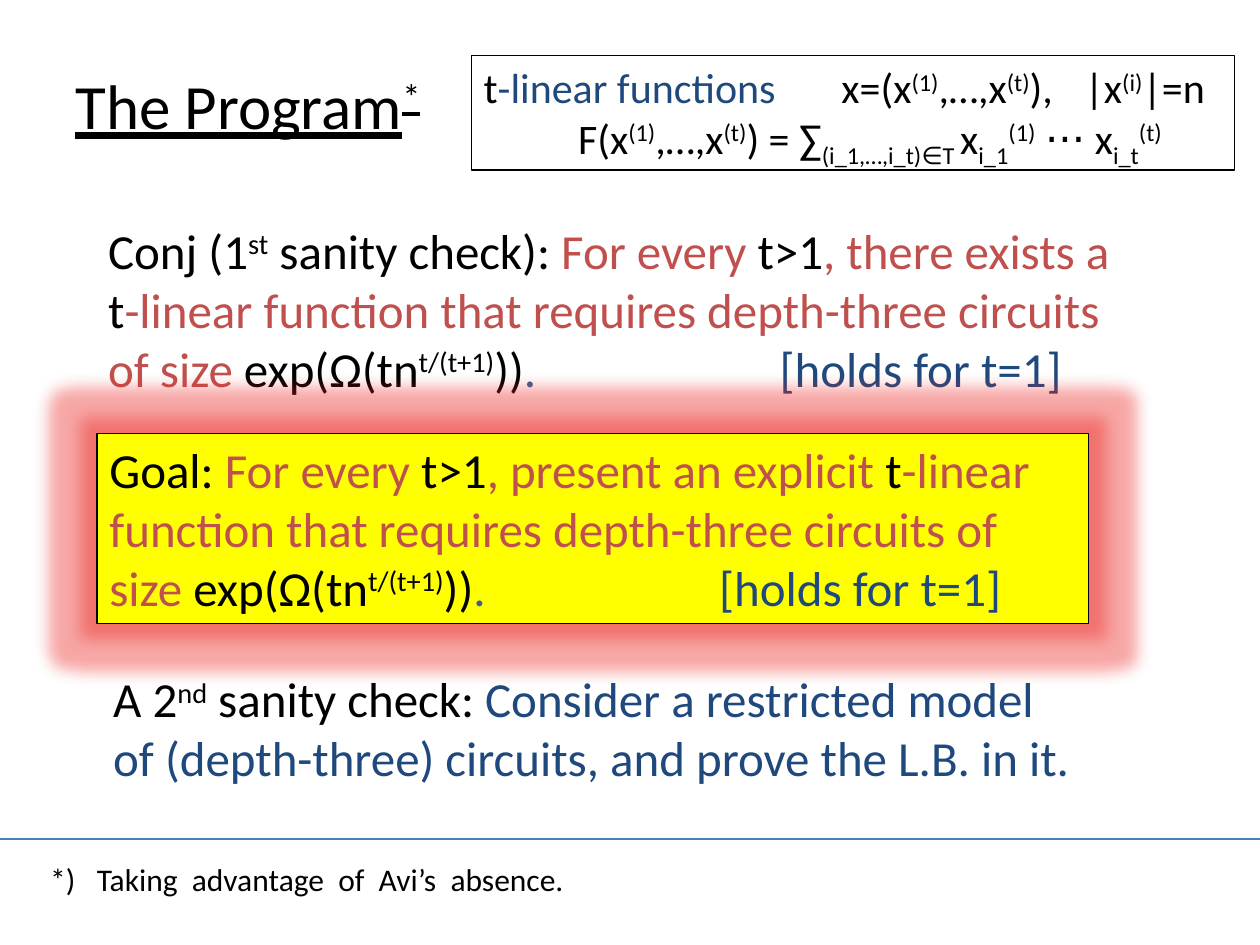
from lxml import etree
from pptx import Presentation
from pptx import util as u
from pptx.dml import color as dml
from pptx.enum import shapes, text
from pptx.oxml import ns

BLACK, NAVY, RED, BLUE = "000000", "1F497D", "C0504D", "376092"
YELLOW, GLOW, RULE = "FFFF00", "EB2320", "4B7EBC"
SUPER, SUB = 30, -25

BOUND = [("exp(Ω(tn", BLACK), ("t/(t+1)", BLACK, SUPER), ("))", BLACK),
         (".\t", BLUE), ("[holds for t=1]", NAVY)]
REQUIREMENT = "-linear function that requires depth-three circuits of size "

BLOCKS = [
    {"box": (0.5, 0.3, 3.24, 1.05), "size": 36, "underline": True,
     "anchor": text.MSO_ANCHOR.MIDDLE,
     "paragraphs": [[("The Program", BLACK), ("*", BLACK, SUPER)]]},
    {"box": (3.74, 0.44, 6.06, 0.91), "size": 24, "outlined": True,
     "tabs": (2.84, 4.77), "indents": (0, 0.75),
     "paragraphs": [
         [("t", BLACK), ("-linear functions\t", NAVY), ("x=(x", BLACK),
          ("(1)", BLACK, SUPER), (",…,x", BLACK), ("(t)", BLACK, SUPER),
          ("),\t|x", BLACK), ("(i)", BLACK, SUPER), ("|=n", BLACK)],
         [("F(x", BLACK), ("(1)", BLACK, SUPER), (",…,x", BLACK),
          ("(t)", BLACK, SUPER), (") = ∑", BLACK), ("(i_1,…,i_t)∈T ", BLACK, SUB),
          ("x", BLACK), ("i_1", BLACK, SUB), ("(1)", BLACK, SUPER),
          (" ⋅⋅⋅ x", BLACK), ("i_t", BLACK, SUB), ("(t)", BLACK, SUPER)]]},
    {"box": (0.76, 1.7, 8.41, 1.51), "size": 28, "tabs": (5.33,),
     "paragraphs": [
         [("Conj (1", BLACK), ("st", BLACK, SUPER), (" sanity check): ", BLACK),
          ("For every ", RED), ("t>1", BLACK), (", there exists a ", RED),
          ("t", BLACK), (REQUIREMENT, RED)] + BOUND]},
    {"box": (0.77, 3.44, 7.87, 1.51), "size": 28, "tabs": (4.84,),
     "outlined": True, "fill": YELLOW, "glow": GLOW,
     "paragraphs": [
         [("Goal: ", BLACK), ("For every ", RED), ("t>1", BLACK),
          (", present an explicit ", RED), ("t", BLACK),
          (REQUIREMENT, RED)] + BOUND]},
    {"box": (0.8, 5.26, 7.89, 1.04), "size": 28,
     "paragraphs": [
         [("A 2", BLACK), ("nd", BLACK, SUPER), (" sanity check: ", BLACK),
          ("Consider a restricted model of (depth-three) circuits, "
           "and prove the L.B. in it.", NAVY)]]},
    {"box": (0.3, 6.78, 8.35, 0.4), "size": 18, "tabs": (0.37,),
     "paragraphs": [[("*)\tTaking  advantage  of  Avi’s  absence.", BLACK)]]},
]


def rgb(value):
    return dml.RGBColor.from_string(value)


def add_element(parent, tag, **attributes):
    element = etree.SubElement(parent, ns.qn(tag))
    for name, value in attributes.items():
        element.set(name, str(value))
    return element


def add_glow(shape, color):
    effects = shape._element.spPr.find(ns.qn("a:effectLst"))
    glow = add_element(effects, "a:glow", rad=u.Inches(0.25))
    tint = add_element(glow, "a:srgbClr", val=color)
    add_element(tint, "a:alpha", val=40000)


def add_runs(paragraph, runs, block):
    for content, color, *baseline in runs:
        run = paragraph.add_run()
        run.text = content
        font_format = {"name": "Calibri", "size": u.Pt(block["size"]),
                       "underline": block.get("underline")}
        for name, value in font_format.items():
            setattr(run.font, name, value)
        run.font.color.rgb = rgb(color)
        if baseline:
            run.font._element.set("baseline", str(baseline[0] * 1000))


def add_block(slide, block):
    box = [u.Inches(length) for length in block["box"]]
    if block.get("outlined"):
        shape = slide.shapes.add_shape(shapes.MSO_SHAPE.RECTANGLE, *box)
        shape.shadow.inherit = False
        shape.line.color.rgb = rgb(BLACK)
        shape.line.width = u.Pt(0.75)
        if "fill" in block:
            shape.fill.solid()
            shape.fill.fore_color.rgb = rgb(block["fill"])
        else:
            shape.fill.background()
        if "glow" in block:
            add_glow(shape, block["glow"])
    else:
        shape = slide.shapes.add_textbox(*box)
    frame = shape.text_frame
    frame.word_wrap = True
    frame.vertical_anchor = block.get("anchor", text.MSO_ANCHOR.TOP)
    indents = block.get("indents", (0,))
    for index, runs in enumerate(block["paragraphs"]):
        paragraph = frame.add_paragraph() if index else frame.paragraphs[0]
        paragraph.alignment = text.PP_ALIGN.LEFT
        properties = paragraph._p.get_or_add_pPr()
        properties.set("marL", str(u.Inches(indents[index])))
        if "tabs" in block:
            stops = add_element(properties, "a:tabLst")
            for position in block["tabs"]:
                add_element(stops, "a:tab", pos=u.Inches(position), algn="l")
        add_runs(paragraph, runs, block)


def add_rule(slide, top):
    rule = slide.shapes.add_connector(
        shapes.MSO_CONNECTOR.STRAIGHT, 0, u.Inches(top), u.Inches(10), u.Inches(top))
    rule.line.color.rgb = rgb(RULE)
    rule.line.width = u.Pt(0.75)
    add_element(rule._element.spPr, "a:effectLst")


def main():
    presentation = Presentation()
    presentation.slide_width = u.Inches(10)
    presentation.slide_height = u.Inches(7.5)
    slide = presentation.slides.add_slide(presentation.slide_layouts[6])
    *body, footnote = BLOCKS
    for block in body:
        add_block(slide, block)
    add_rule(slide, 6.66)
    add_block(slide, footnote)
    presentation.save("out.pptx")


if __name__ == "__main__":
    main()
